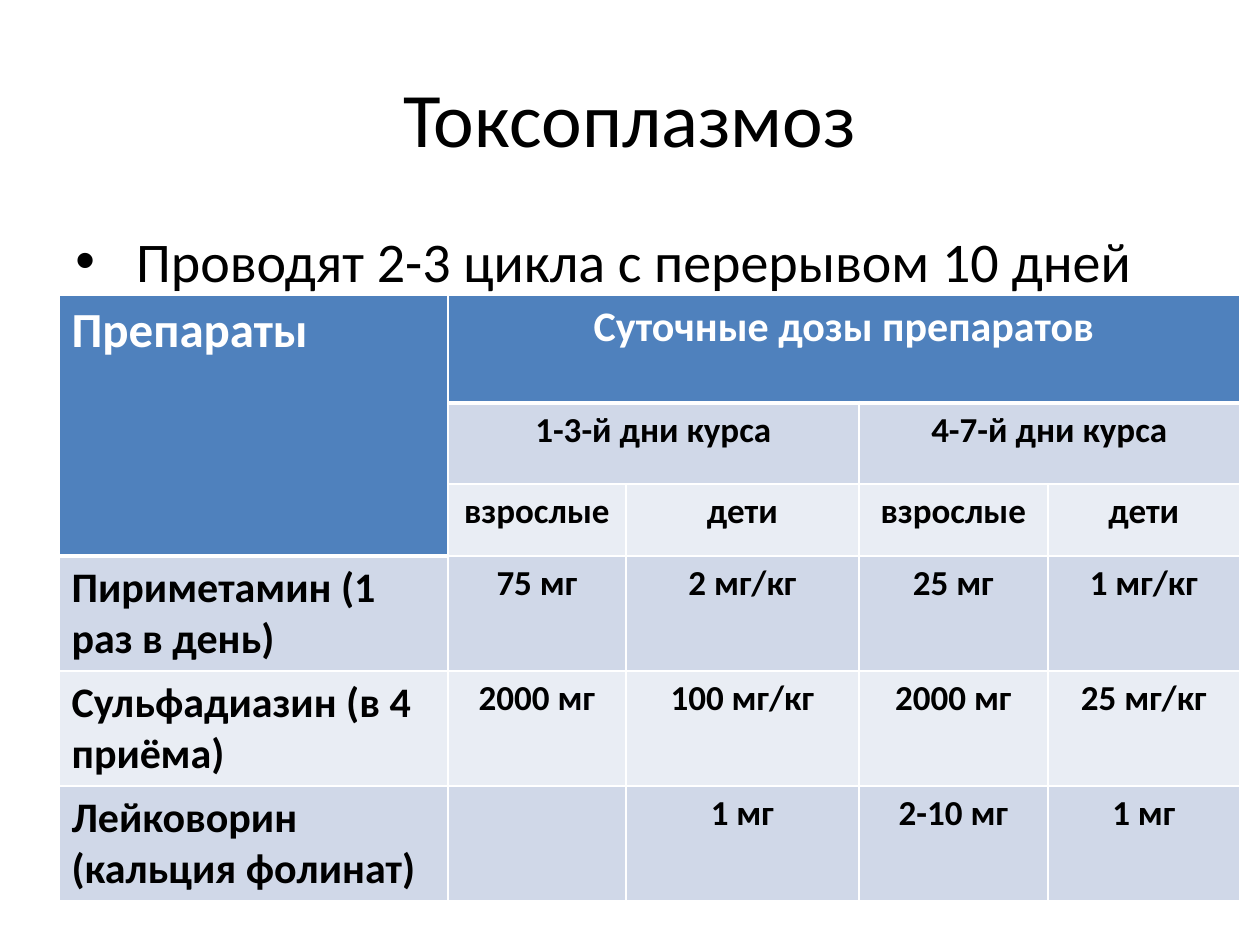
import pptx
import pptx.dml.color
import pptx.enum.text
import pptx.oxml
import pptx.oxml.ns
import pptx.util

PX = 914400 // 126
ALIGN = pptx.enum.text.PP_ALIGN
ANCHOR = pptx.enum.text.MSO_ANCHOR
NS = pptx.oxml.ns.nsdecls("a")


def rgb(code):
    return pptx.dml.color.RGBColor.from_string(code)


def write(frame, text, size=20, color="000000", bold=False, align=ALIGN.CENTER, bullet=None):
    frame.word_wrap = True
    para = frame.paragraphs[0]
    para.alignment = align
    if bullet:
        props = para._p.get_or_add_pPr()
        props.set("marL", str(48 * PX))
        props.set("indent", str(-48 * PX))
        props.append(pptx.oxml.parse_xml(f'<a:buFont {NS} typeface="Arial"/>'))
        props.append(pptx.oxml.parse_xml(f'<a:buChar {NS} char="{bullet}"/>'))
    run = para.add_run()
    run.text = text
    font = run.font
    font.name, font.size, font.bold = "Calibri", pptx.util.Pt(size), bold
    font.color.rgb = rgb(color)


deck = pptx.Presentation()
deck.slide_width, deck.slide_height = 1260 * PX, 945 * PX
slide = deck.slides.add_slide(deck.slide_layouts[5])

# Title
title = slide.shapes.title
title.left, title.top, title.width, title.height = 63 * PX, 38 * PX, 1134 * PX, 157 * PX
title.text_frame.vertical_anchor = ANCHOR.MIDDLE
write(title.text_frame, "Токсоплазмоз", size=44)

# Bullet line
body = slide.shapes.add_textbox(63 * PX, 220 * PX, 1134 * PX, 624 * PX)
write(body.text_frame, " Проводят 2-3 цикла с перерывом 10 дней",
      size=32, align=ALIGN.LEFT, bullet="•")

# Dose table
rows = [
    ["Препараты", "Суточные дозы препаратов", "", "", ""],
    ["", "1-3-й дни курса", "", "4-7-й дни курса", ""],
    ["", "взрослые", "дети", "взрослые", "дети"],
    ["Пириметамин (1 раз в день)", "75 мг", "2 мг/кг", "25 мг", "1 мг/кг"],
    ["Сульфадиазин (в 4 приёма)", "2000 мг", "100 мг/кг", "2000 мг", "25 мг/кг"],
    ["Лейковорин (кальция фолинат)", "", "1 мг", "2-10 мг", "1 мг"],
]
wide = [389, 178, 233, 189, 192]
high = [108, 81, 72, 115, 115, 115]
table = slide.shapes.add_table(6, 5, 59 * PX, 295 * PX, sum(wide) * PX, sum(high) * PX).table
for col, size in zip(table.columns, wide):
    col.width = size * PX
for row, size in zip(table.rows, high):
    row.height = size * PX

# Merged headings: first cell, last cell
for first, last in [((0, 0), (2, 0)), ((0, 1), (0, 4)), ((1, 1), (1, 2)), ((1, 3), (1, 4))]:
    table.cell(*first).merge(table.cell(*last))

# Cell borders, fills and text; a thick line closes the blue heading
for r, row in enumerate(rows):
    for c, text in enumerate(row):
        cell = table.cell(r, c)
        head = r == 0 or (c == 0 and r < 3)
        last = 2 if c == 0 else 0
        thick = {"T": r == last + 1, "B": r == last or (r, c) == (0, 0)}
        props = cell._tc.get_or_add_tcPr()
        for side in "LRTB":
            line = 3 if thick.get(side) else 1
            props.append(pptx.oxml.parse_xml(
                f'<a:ln{side} {NS} w="{line * 12700}"><a:solidFill>'
                f'<a:srgbClr val="FFFFFF"/></a:solidFill></a:ln{side}>'))
        cell.fill.solid()
        cell.fill.fore_color.rgb = rgb("4F81BD" if head else "D0D8E8" if r % 2 else "E9EDF4")
        if text:
            size = 28 if (r, c) == (0, 0) else 24 if r == 0 or c == 0 else 20
            write(cell.text_frame, text, size=size, bold=True,
                  color="FFFFFF" if head else "000000",
                  align=ALIGN.CENTER if c else ALIGN.LEFT)

deck.save("out.pptx")
